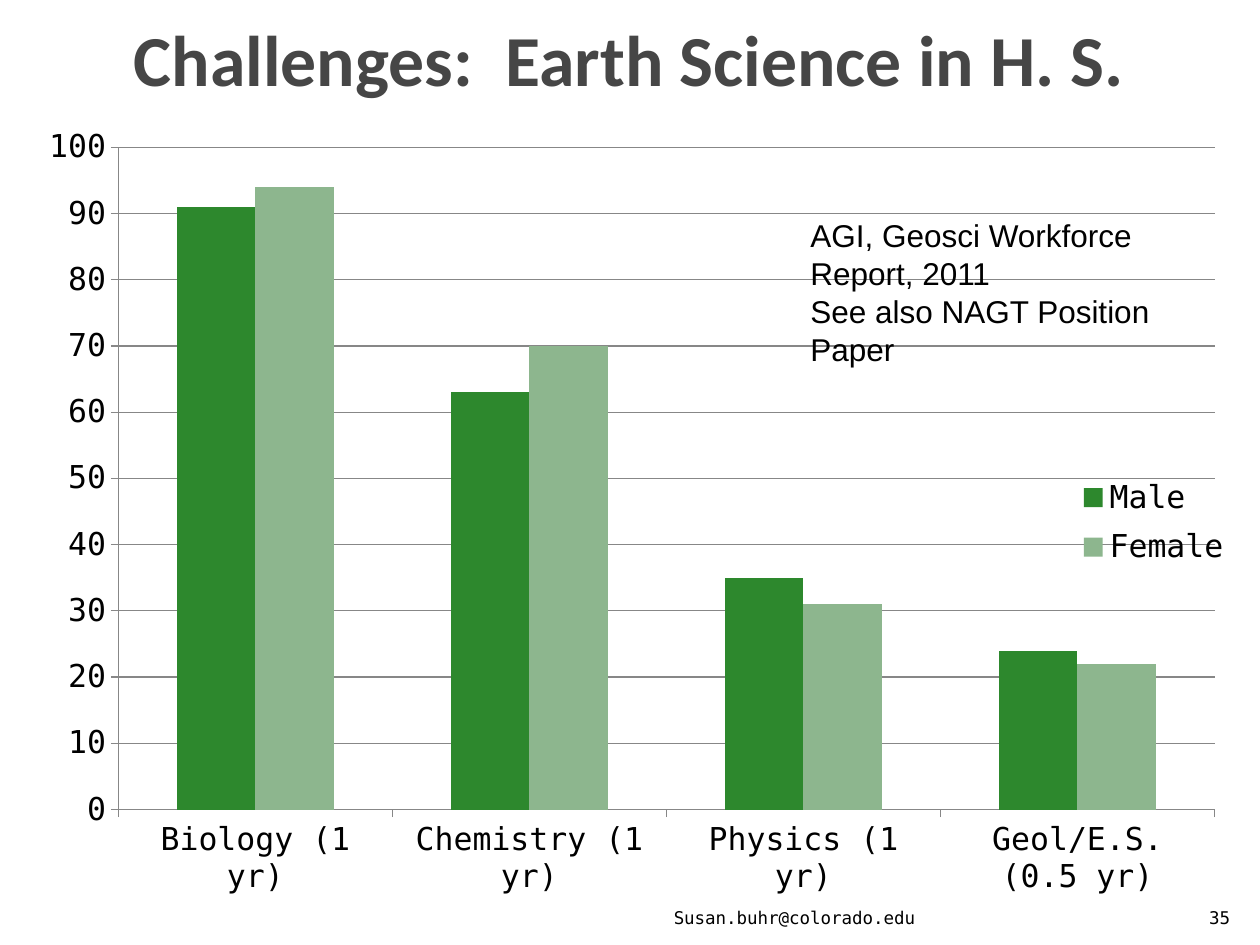
from pptx import Presentation
from pptx.chart.data import CategoryChartData
from pptx.dml.color import RGBColor
from pptx.enum.chart import XL_CHART_TYPE, XL_LEGEND_POSITION, XL_TICK_MARK
from pptx.enum.text import MSO_ANCHOR, PP_ALIGN
from pptx.oxml import parse_xml
from pptx.oxml.ns import nsdecls, qn
from pptx.util import Pt

COLORS = {
    "title": "464646",
    "text": "000000",
    "grid": "878787",
    "male": "2D882D",
    "female": "8DB68E",
}
MONO = "DejaVu Sans Mono"


def rgb(name):
    return RGBColor.from_string(COLORS[name])


def layout_xml(x, y, w, h, inner=False):
    target = '<c:layoutTarget val="inner"/>' if inner else ""
    return parse_xml(
        f'<c:layout {nsdecls("c")}><c:manualLayout>{target}'
        '<c:xMode val="edge"/><c:yMode val="edge"/>'
        f'<c:x val="{x}"/><c:y val="{y}"/><c:w val="{w}"/><c:h val="{h}"/>'
        "</c:manualLayout></c:layout>"
    )


class Deck:
    def __init__(self, width, height):
        self.prs = Presentation()
        self.prs.slide_width, self.prs.slide_height = Pt(width), Pt(height)
        self.s = self.prs.slides.add_slide(self.prs.slide_layouts[5])

    def style(self, font, size, name, color="text", bold=False):
        font.size, font.name, font.bold = Pt(size), name, bold
        font.color.rgb = rgb(color)

    def title(self, text, x, y, w, h):
        sp = self.s.shapes.title
        sp.left, sp.top, sp.width, sp.height = Pt(x), Pt(y), Pt(w), Pt(h)
        tf = sp.text_frame
        tf.vertical_anchor = MSO_ANCHOR.MIDDLE
        p = tf.paragraphs[0]
        p.alignment = PP_ALIGN.CENTER
        r = p.add_run()
        r.text = text
        self.style(r.font, 41, "Calibri", "title", True)

    def text(self, lines, x, y, w, h, size, name,
             align=PP_ALIGN.LEFT, anchor=MSO_ANCHOR.TOP):
        sp = self.s.shapes.add_textbox(Pt(x), Pt(y), Pt(w), Pt(h))
        tf = sp.text_frame
        tf.word_wrap = True
        tf.vertical_anchor = anchor
        for i, line in enumerate(lines):
            p = tf.add_paragraph() if i else tf.paragraphs[0]
            p.alignment = align
            r = p.add_run()
            r.text = line
            self.style(r.font, size, name)

    def footer(self, text, x, w):
        self.text([text], x, 505, w, 28.8, 10, MONO,
                  PP_ALIGN.RIGHT, MSO_ANCHOR.BOTTOM)

    def column_chart(self, categories, series, x, y, w, h):
        data = CategoryChartData()
        data.categories = categories
        for name, values, _ in series:
            data.add_series(name, values)
        chart = self.s.shapes.add_chart(
            XL_CHART_TYPE.COLUMN_CLUSTERED, Pt(x), Pt(y), Pt(w), Pt(h), data
        ).chart
        self.style(chart.font, 18, MONO)
        chart.has_title = False

        plot = chart.plots[0]
        plot.gap_width, plot.overlap = 150, 0
        plot.vary_by_categories = False
        for ser, (_, _, color) in zip(plot.series, series):
            ser.format.fill.solid()
            ser.format.fill.fore_color.rgb = rgb(color)

        value_axis = chart.value_axis
        value_axis.minimum_scale, value_axis.maximum_scale = 0, 100
        value_axis.major_unit = 10
        value_axis.has_major_gridlines = True
        for axis in (chart.category_axis, value_axis):
            axis.major_tick_mark = XL_TICK_MARK.OUTSIDE
            axis.minor_tick_mark = XL_TICK_MARK.NONE
        for part in (chart.category_axis, value_axis, value_axis.major_gridlines):
            part.format.line.color.rgb = rgb("grid")
            part.format.line.width = Pt(0.75)

        chart.has_legend = True
        chart.legend.position = XL_LEGEND_POSITION.RIGHT
        chart.legend.include_in_layout = False
        self.place_chart_parts(chart)

    def place_chart_parts(self, chart):
        area = chart.element.find(".//" + qn("c:plotArea"))
        legend = chart.element.find(".//" + qn("c:legend"))
        for part in (area, legend):
            for old in part.findall(qn("c:layout")):
                part.remove(old)
        area.insert(0, layout_xml(0.08, 0.04, 0.9, 0.83, inner=True))
        legend.find(qn("c:legendPos")).addnext(layout_xml(0.86, 0.44, 0.14, 0.14))
        legend.find(qn("c:overlay")).set("val", "1")


def main():
    deck = Deck(720, 540)
    deck.title("Challenges:  Earth Science in H. S.", 36, -12, 648, 90)
    deck.column_chart(
        ["Biology (1 yr)", "Chemistry (1 yr)", "Physics (1 yr)", "Geol/E.S. (0.5 yr)"],
        [("Male", (91, 63, 35, 24), "male"), ("Female", (94, 70, 31, 22), "female")],
        12, 66, 696, 456,
    )
    deck.text(
        ["AGI, Geosci Workforce Report, 2011", "See also NAGT Position Paper"],
        456, 120, 210, 94, 18, "Arial",
    )
    deck.footer("35", 681, 29)
    deck.footer("Susan.buhr@colorado.edu", 345, 185)
    deck.prs.save("out.pptx")


if __name__ == "__main__":
    main()
